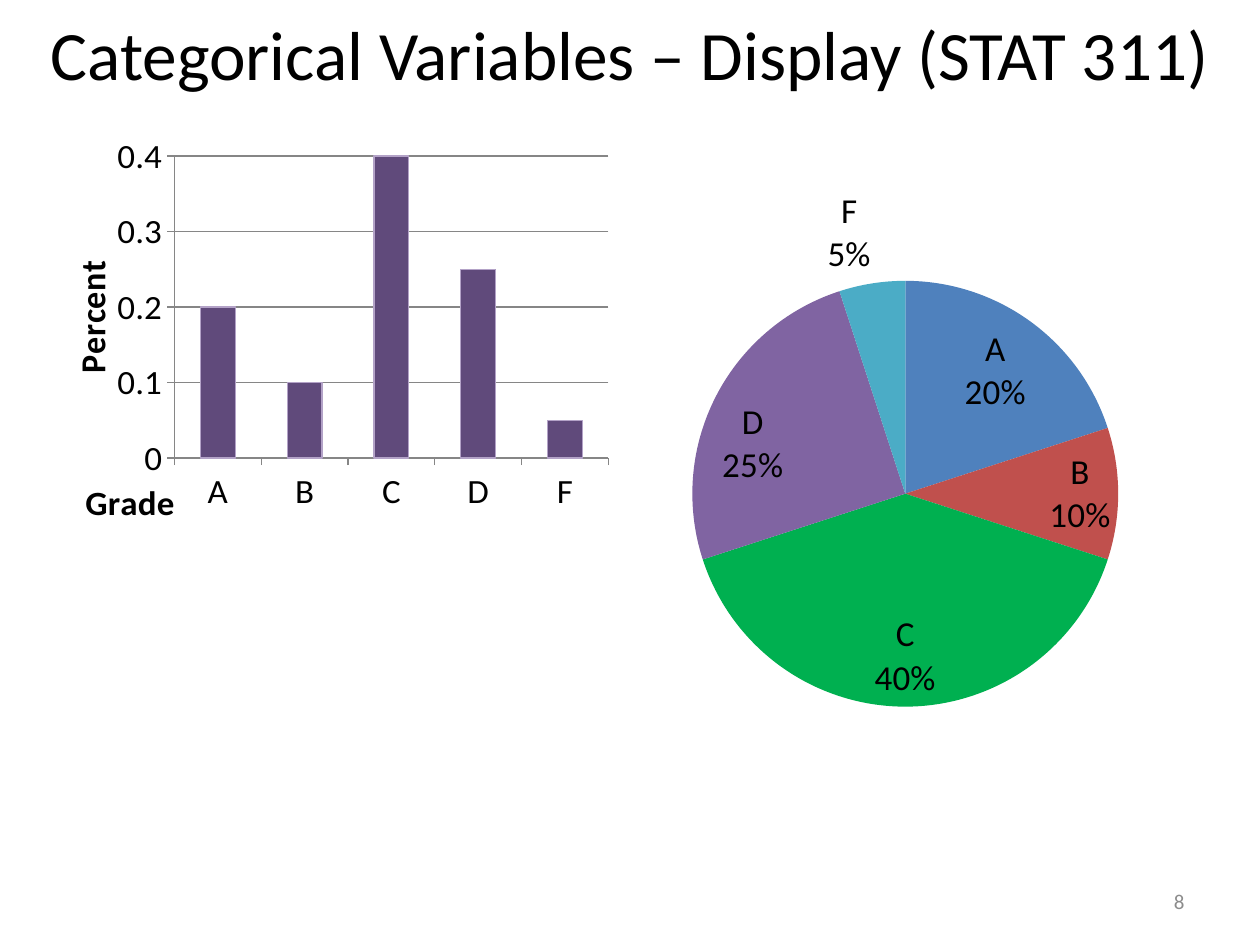
"""Build a slide that shows grade shares as a column chart and a pie chart."""
from dataclasses import dataclass
from typing import Any, Optional

from lxml.etree import SubElement
from pptx import Presentation
from pptx.chart.data import CategoryChartData as Data
from pptx.dml.color import RGBColor as Rgb
from pptx.enum.chart import XL_CHART_TYPE as Kind
from pptx.enum.chart import XL_LABEL_POSITION as Spot
from pptx.enum.chart import XL_TICK_MARK as Tick
from pptx.enum.text import MSO_ANCHOR as Anchor
from pptx.enum.text import PP_ALIGN as Align
from pptx.oxml.ns import qn
from pptx.util import Emu, Pt

SCALE = 914400 / 126


@dataclass(frozen=True)
class Theme:
    font: str = "Calibri"
    ink: str = "000000"
    grey: str = "8C8C8C"
    rule: str = "868686"
    bar: str = "604A7B"
    edge: str = "B3A2C7"
    head: float = 39.6
    label: float = 20
    base: float = 10
    foot: float = 12


@dataclass(frozen=True)
class Box:
    left: int
    top: int
    width: int
    height: int

    def emu(self) -> list[Emu]:
        return [px(n) for n in (self.left, self.top, self.width, self.height)]


@dataclass(frozen=True)
class Grade:
    name: str
    share: int
    color: str


THEME = Theme()
GRADES = [
    Grade("A", 20, "4F81BD"),
    Grade("B", 10, "C0504D"),
    Grade("C", 40, "00B050"),
    Grade("D", 25, "8064A2"),
    Grade("F", 5, "4BACC6"),
]


def px(count: int) -> Emu:
    return Emu(round(count * SCALE))


def style(font: Any, size: float, color: str = THEME.ink, bold: bool = False) -> None:
    font.name, font.size, font.bold = THEME.font, Pt(size), bold
    font.color.rgb = Rgb.from_string(color)


def paint(part: Any, color: str) -> None:
    part.fill.solid()
    part.fill.fore_color.rgb = Rgb.from_string(color)


def stroke(line: Any, color: str) -> None:
    line.color.rgb = Rgb.from_string(color)
    line.width = Pt(0.75)


def write(shape: Any, text: str, size: float, color: str, align: Align) -> None:
    frame = shape.text_frame
    frame.word_wrap = True
    frame.vertical_anchor = Anchor.MIDDLE
    para = frame.paragraphs[0]
    para.alignment = align
    run = para.add_run()
    run.text = text
    style(run.font, size, color)


def place(node: Any, index: int, x: float, y: float,
          size: Optional[tuple[float, float]] = None) -> None:
    for old in node.findall(qn("c:layout")):
        node.remove(old)
    layout = SubElement(node, qn("c:layout"))
    node.insert(index, layout)
    manual = SubElement(layout, qn("c:manualLayout"))
    rules = [("xMode", "edge"), ("yMode", "edge"), ("x", x), ("y", y)]
    if size:
        rules = [("layoutTarget", "inner"), *rules, ("w", size[0]), ("h", size[1])]
    for tag, val in rules:
        SubElement(manual, qn(f"c:{tag}")).set("val", str(val))


def add_chart(slide: Any, kind: Kind, box: Box, shares: list[float]) -> Any:
    data = Data()
    data.categories = [grade.name for grade in GRADES]
    data.add_series("Series 1", shares)
    chart = slide.shapes.add_chart(kind, *box.emu(), data).chart
    chart.has_title = chart.has_legend = False
    style(chart.font, THEME.base)
    return chart


def plot_area(chart: Any) -> Any:
    return chart._chartSpace.find(".//" + qn("c:plotArea"))


def show_share(node: Any) -> None:
    for tag, val in (("Val", 0), ("CatName", 1), ("Percent", 1)):
        node.find(qn(f"c:show{tag}")).set("val", str(val))
    mark = SubElement(node, qn("c:separator"))
    mark.text = "\n"
    node.find(qn("c:showBubbleSize")).addnext(mark)


def draw_pie(slide: Any, box: Box) -> None:
    chart = add_chart(slide, Kind.PIE, box, [grade.share for grade in GRADES])
    place(plot_area(chart), 0, 0.23, 0.2, (0.52, 0.77))
    series = chart.plots[0].series[0]
    for point, grade in zip(series.points, GRADES):
        paint(point.format, grade.color)
    labels = series.data_labels
    style(labels.font, THEME.label)
    labels.position = Spot.INSIDE_END
    last = series.points[len(GRADES) - 1].data_label
    style(last.font, THEME.label)
    last.position = Spot.OUTSIDE_END
    group = labels._element
    for node in (group, group.find(qn("c:dLbl"))):
        show_share(node)


def set_axis(axis: Any, text: str, x: float, y: float) -> None:
    axis.major_tick_mark, axis.minor_tick_mark = Tick.OUTSIDE, Tick.NONE
    style(axis.tick_labels.font, THEME.label)
    stroke(axis.format.line, THEME.rule)
    title = axis.axis_title
    run = title.text_frame.paragraphs[0].add_run()
    run.text = text
    style(run.font, THEME.label, bold=True)
    place(title._element, 1, x, y)


def draw_bars(slide: Any, box: Box) -> None:
    shares = [grade.share / 100 for grade in GRADES]
    chart = add_chart(slide, Kind.COLUMN_CLUSTERED, box, shares)
    place(plot_area(chart), 0, 0.287, 0.185, (0.713, 0.673))
    plot = chart.plots[0]
    plot.vary_by_categories, plot.gap_width = False, 150
    form = plot.series[0].format
    paint(form, THEME.bar)
    stroke(form.line, THEME.edge)
    set_axis(chart.category_axis, "Grade", 0.13, 0.89)
    axis = chart.value_axis
    set_axis(axis, "Percent", 0.1, 0.41)
    body = axis.axis_title.text_frame._txBody.bodyPr
    body.set("rot", "-5400000")
    body.set("vert", "horz")
    axis.minimum_scale, axis.maximum_scale, axis.major_unit = 0, 0.4, 0.1
    axis.tick_labels.number_format = "General"
    axis.tick_labels.number_format_is_linked = False
    stroke(axis.major_gridlines.format.line, THEME.rule)


def main() -> None:
    deck = Presentation()
    deck.slide_width, deck.slide_height = px(1260), px(945)
    slide = deck.slides.add_slide(deck.slide_layouts[5])
    draw_pie(slide, Box(504, 168, 819, 557))
    title = slide.shapes.title
    title.left, title.top, title.width, title.height = Box(0, 0, 1260, 105).emu()
    write(title, "Categorical Variables – Display (STAT 311)",
          THEME.head, THEME.ink, Align.CENTER)
    draw_bars(slide, Box(0, 73, 609, 462))
    page = slide.shapes.add_textbox(*Box(903, 876, 294, 50).emu())
    write(page, "8", THEME.foot, THEME.grey, Align.RIGHT)
    deck.save("out.pptx")


if __name__ == "__main__":
    main()
